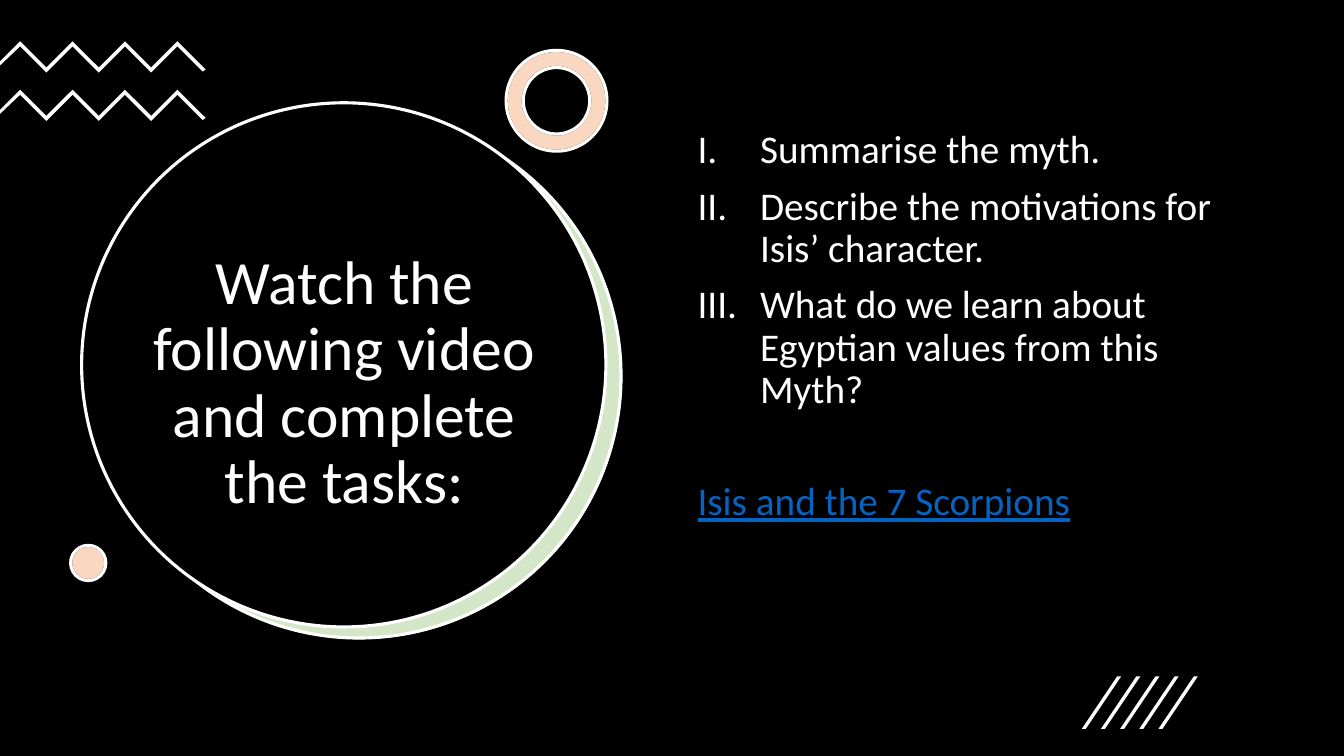
"""Build the slide that sets the tasks for the Isis myth video."""
import lxml.etree
import pptx
import pptx.dml.color
import pptx.enum.shapes
import pptx.enum.text
import pptx.oxml.ns
import pptx.util

EMU_PER_PX = 9144
BLACK = pptx.dml.color.RGBColor(0x00, 0x00, 0x00)
WHITE = pptx.dml.color.RGBColor(0xFF, 0xFF, 0xFF)
GREEN = pptx.dml.color.RGBColor(0x70, 0xAD, 0x47)
ORANGE = pptx.dml.color.RGBColor(0xED, 0x7D, 0x31)
LINK_BLUE = pptx.dml.color.RGBColor(0x05, 0x63, 0xC1)
PRESET = pptx.enum.shapes.MSO_SHAPE
TASKS = (
    "Summarise the myth.",
    "Describe the motivations for Isis’ character.",
    "What do we learn about Egyptian values from this Myth?",
)


def px(length):
    return pptx.util.Emu(length * EMU_PER_PX)


def paint(shape, fill, line=None, alpha=None):
    shape.shadow.inherit = False
    shape.fill.solid()
    shape.fill.fore_color.rgb = fill
    if alpha is not None:
        color = shape.element.spPr.find(pptx.oxml.ns.qn("a:solidFill"))[0]
        opacity = lxml.etree.SubElement(color, pptx.oxml.ns.qn("a:alpha"))
        opacity.set("val", str(alpha * 1000))
    if line is None:
        shape.line.fill.background()
    else:
        shape.line.color.rgb = line
        shape.line.width = pptx.util.Pt(2.25)


def add_preset(slide, preset, box, fill, line=None, alpha=None):
    shape = slide.shapes.add_shape(preset, *map(px, box))
    paint(shape, fill, line, alpha)
    return shape


def add_tinted(slide, preset, box, ring=None):
    for fill, line, alpha in ((WHITE, BLACK, None), (ORANGE, WHITE, 30)):
        shape = add_preset(slide, preset, box, fill, line, alpha)
        if ring is not None:
            shape.adjustments[0] = ring


def add_outline(group, points):
    builder = group.shapes.build_freeform(*points[0], scale=EMU_PER_PX)
    builder.add_line_segments(points[1:], close=True)
    paint(builder.convert_to_shape(), WHITE)


def add_zigzags(slide):
    group = slide.shapes.add_group_shape()
    for top in (41, 89):
        upper = [(20 + 26 * i, top + 26 * (i % 2)) for i in range(7)]
        lower = [(x, y + 5) for x, y in reversed(upper)]
        right_end = [(204, top + 28), (201, top + 30)]
        left_end = [(0, top + 24), (0, top + 20)]
        add_outline(group, upper + right_end + lower + left_end)


def add_slashes(slide):
    group = slide.shapes.add_group_shape()
    for i in range(5):
        left = 1073 + 19 * i
        add_outline(group, [(left + 4, 723), (left, 723), (left + 35, 671), (left + 39, 671)])


def add_text_frame(slide, box, anchor):
    frame = slide.shapes.add_textbox(*map(px, box)).text_frame
    frame.word_wrap = True
    frame.vertical_anchor = anchor
    return frame


def add_run(paragraph, text, size, color):
    paragraph.line_spacing = 0.9
    run = paragraph.add_run()
    run.text = text
    run.font.name = "Calibri"
    run.font.size = pptx.util.Pt(size)
    run.font.color.rgb = color
    return run


def number_paragraph(paragraph):
    properties = paragraph._p.get_or_add_pPr()
    properties.set("marL", str(px(62)))
    properties.set("indent", str(-px(62)))
    bullet = lxml.etree.SubElement(properties, pptx.oxml.ns.qn("a:buAutoNum"))
    bullet.set("type", "romanUcPeriod")


def add_title(slide):
    frame = add_text_frame(slide, (121, 205, 441, 352), pptx.enum.text.MSO_ANCHOR.MIDDLE)
    paragraph = frame.paragraphs[0]
    paragraph.alignment = pptx.enum.text.PP_ALIGN.CENTER
    add_run(paragraph, "Watch the following video and complete the tasks:", 44, WHITE)


def add_tasks(slide):
    frame = add_text_frame(slide, (682, 124, 571, 483), pptx.enum.text.MSO_ANCHOR.TOP)
    for i, task in enumerate(TASKS):
        paragraph = frame.add_paragraph() if i else frame.paragraphs[0]
        number_paragraph(paragraph)
        if i:
            paragraph.space_before = pptx.util.Pt(10)
        add_run(paragraph, task, 28, WHITE)
    paragraph = frame.add_paragraph()
    paragraph.space_before = pptx.util.Pt(50)
    add_run(paragraph, "Isis and the 7 Scorpions", 28, LINK_BLUE).font.underline = True


def main():
    presentation = pptx.Presentation()
    presentation.slide_width = pptx.util.Inches(13.33)
    presentation.slide_height = pptx.util.Inches(7.5)
    slide = presentation.slides.add_slide(presentation.slide_layouts[6])
    add_preset(slide, PRESET.RECTANGLE, (0, 0, 1333, 750), BLACK)
    add_preset(slide, PRESET.OVAL, (97, 114, 520, 520), WHITE)
    add_preset(slide, PRESET.OVAL, (96, 113, 520, 520), GREEN, WHITE, 30)
    add_preset(slide, PRESET.OVAL, (81, 102, 520, 520), BLACK, WHITE)
    add_title(slide)
    add_zigzags(slide)
    add_tinted(slide, PRESET.DONUT, (502, 50, 100, 100), ring=0.17)
    add_tinted(slide, PRESET.OVAL, (70, 541, 35, 35))
    add_tasks(slide)
    add_slashes(slide)
    presentation.save("out.pptx")


if __name__ == "__main__":
    main()
